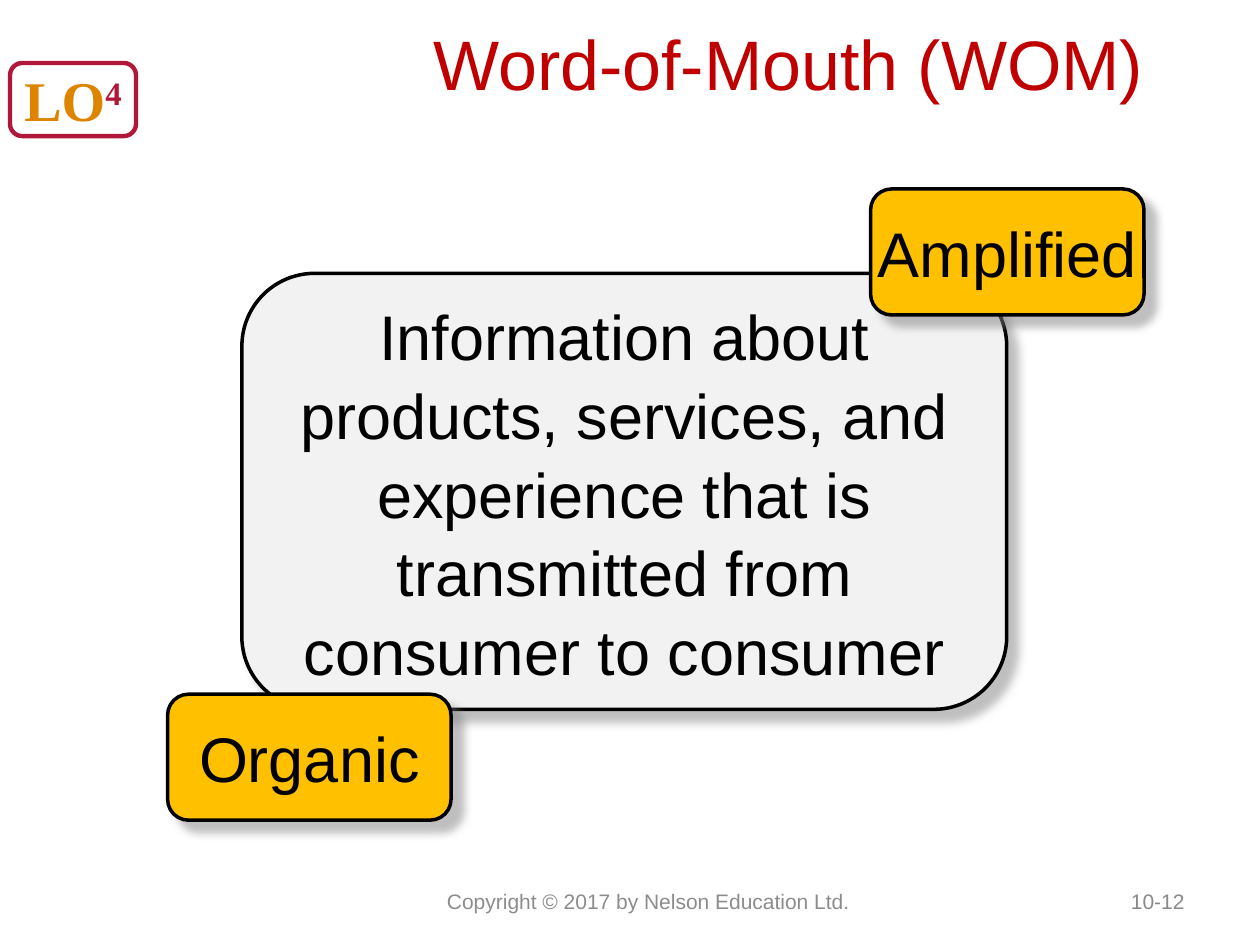
import pptx
import pptx.util
import pptx.dml.color
import pptx.enum.shapes
import pptx.enum.text
import pptx.oxml
import pptx.oxml.ns

Inches = pptx.util.Inches
Pt = pptx.util.Pt
RGBColor = pptx.dml.color.RGBColor
ALIGN = pptx.enum.text.PP_ALIGN

RED = RGBColor(0xC0, 0x00, 0x00)
CRIMSON = RGBColor(0xB1, 0x17, 0x38)
ORANGE = RGBColor(0xDD, 0x84, 0x01)
GOLD = RGBColor(0xFF, 0xC0, 0x00)
PALE = RGBColor(0xF2, 0xF2, 0xF2)
GRAY = RGBColor(0x89, 0x89, 0x89)
SILVER = RGBColor(0x8C, 0x8C, 0x8C)
BLACK = RGBColor(0x00, 0x00, 0x00)
WHITE = RGBColor(0xFF, 0xFF, 0xFF)

SHADOW = (
    '<a:effectLst %s><a:outerShdw blurRad="%d" dist="%d" dir="2700000" '
    'algn="tl" rotWithShape="0"><a:srgbClr val="808080">'
    '<a:alpha val="50000"/></a:srgbClr></a:outerShdw></a:effectLst>'
    % (pptx.oxml.ns.nsdecls("a"), Pt(5), Pt(8.5))
)


def write(shape, text, size=36, color=BLACK, font="Arial", bold=False,
          align=ALIGN.CENTER, wrap=True, raised=False, spacing=None):
    """Add a run to the shape's only paragraph and format it."""
    frame = shape.text_frame
    frame.word_wrap = wrap
    frame.vertical_anchor = pptx.enum.text.MSO_ANCHOR.MIDDLE
    par = frame.paragraphs[0]
    par.alignment = align
    if spacing:
        par.line_spacing = spacing
    run = par.add_run()
    run.text = text
    run.font.size = Pt(size)
    run.font.name = font
    run.font.bold = bold
    run.font.color.rgb = color
    if raised:
        run.font._element.set("baseline", "30000")


def label(slide, box, text, **form):
    """Plain text in a box given in inches."""
    write(slide.shapes.add_textbox(*map(Inches, box)), text, **form)


def card(slide, box, fill, line=BLACK, width=2, shadow=True):
    """Rounded box, with or without a soft shadow."""
    kind = pptx.enum.shapes.MSO_SHAPE.ROUNDED_RECTANGLE
    shape = slide.shapes.add_shape(kind, *map(Inches, box))
    shape.fill.solid()
    shape.fill.fore_color.rgb = fill
    shape.line.color.rgb = line
    shape.line.width = Pt(width)
    shape.shadow.inherit = False
    if shadow:
        props = shape._element.spPr
        props.remove(props.find(pptx.oxml.ns.qn("a:effectLst")))
        props.append(pptx.oxml.parse_xml(SHADOW))
    return shape


def badge(slide, box):
    """Learning objective mark."""
    shape = card(slide, box, WHITE, line=CRIMSON, width=2.5, shadow=False)
    form = dict(size=32, font="Times New Roman", bold=True, wrap=False)
    write(shape, "LO", color=ORANGE, **form)
    write(shape, "4", color=CRIMSON, raised=True, **form)


def model(slide, left, top):
    """Definition with a tag at two opposite corners."""
    main = card(slide, (left, top, 6.07, 3.46), PALE)
    write(main, "Information about products, services, and experience "
                "that is transmitted from consumer to consumer", spacing=1.04)
    tags = [("Organic", -0.59, 3.34, 2.25), ("Amplified", 4.99, -0.67, 2.17)]
    for text, x, y, width in tags:
        tag = card(slide, (left + x, top + y, width, 1), GOLD)
        write(tag, text, wrap=False)


def footer(slide, top):
    """Page number and copyright line."""
    label(slide, (7.17, top, 2.33, 0.4), "10-12", size=12, color=GRAY,
          align=ALIGN.RIGHT)
    label(slide, (3.42, top, 3.5, 0.4),
          "Copyright © 2017 by Nelson Education Ltd. ", size=12, color=SILVER)


def main():
    deck = pptx.Presentation()
    deck.slide_width = Inches(10)
    deck.slide_height = Inches(7.5)
    slide = deck.slides.add_slide(deck.slide_layouts[6])
    # Title
    label(slide, (0.75, -0.17, 8.42, 1.33), "Word-of-Mouth (WOM)", size=40,
          color=RED, align=ALIGN.RIGHT)
    # Body
    badge(slide, (0.08, 0.5, 1, 0.58))
    model(slide, 1.92, 2.17)
    footer(slide, 6.95)
    deck.save("out.pptx")


if __name__ == "__main__":
    main()
